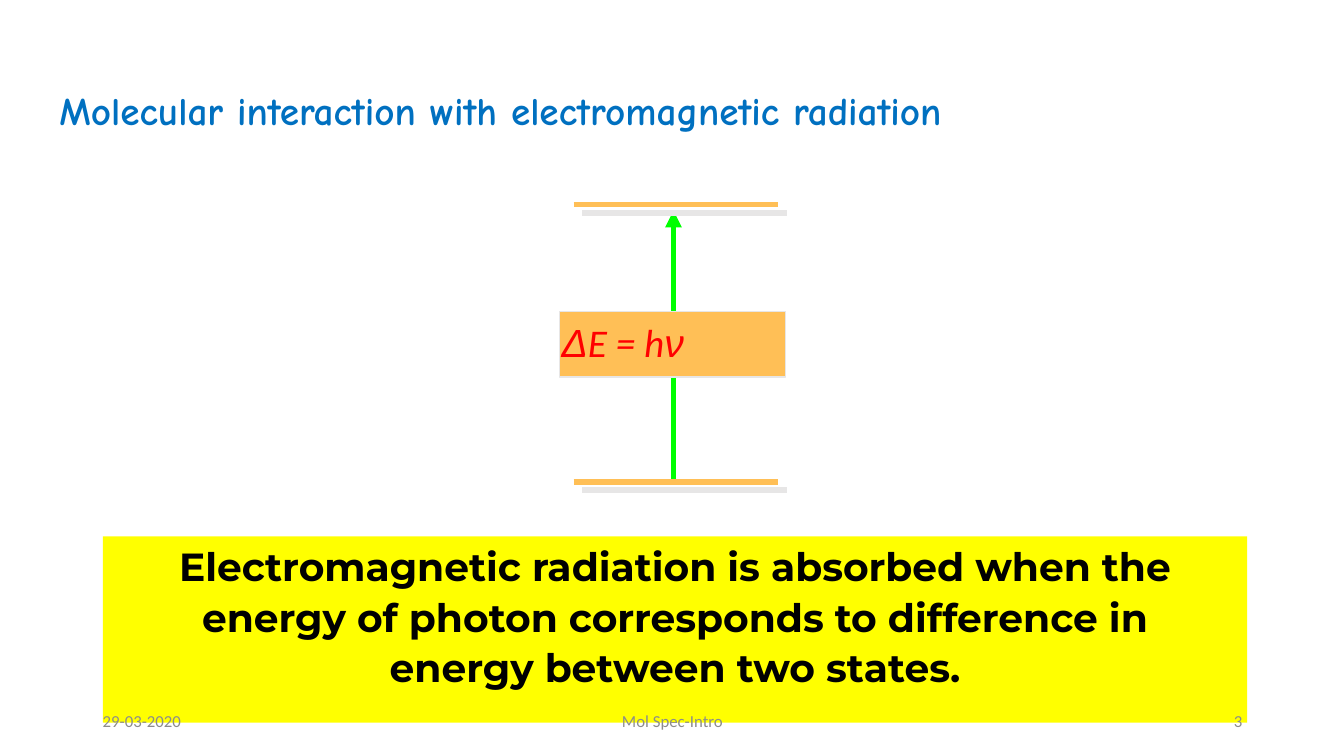
from dataclasses import dataclass

from lxml.etree import SubElement
from pptx import Presentation
from pptx.dml.color import RGBColor
from pptx.enum.shapes import MSO_CONNECTOR, MSO_SHAPE
from pptx.enum.text import MSO_ANCHOR, PP_ALIGN
from pptx.oxml.ns import qn
from pptx.util import Inches, Pt


@dataclass(frozen=True)
class Theme:
    """Colours, fonts and type sizes of the slide."""
    heading: str = "0070C0"
    level: str = "FFBF56"
    shade: str = "E7E6E6"
    photon: str = "00FF00"
    formula: str = "FF0000"
    statement: str = "000000"
    highlight: str = "FFFF00"
    footer: str = "8C8C8C"
    heading_font: str = "Comic Neue"
    statement_font: str = "Montserrat"
    symbol_font: str = "Arial"
    body_font: str = "Calibri"
    large: int = 28
    small: int = 12
    leading: int = 36
    stroke: int = 4


def write(paragraph, text, font, size, color, bold=False, italic=False):
    """Add text to a paragraph, with a line break at each newline."""
    for index, line in enumerate(text.split("\n")):
        if index:
            paragraph.add_line_break()
        run = paragraph.add_run()
        run.text = line
        run.font.name = font
        run.font.size = Pt(size)
        run.font.color.rgb = RGBColor.from_string(color)
        run.font.bold = bold
        run.font.italic = italic


class SlideBuilder:
    """Draws elements on one slide in one style."""

    def __init__(self, slide, theme):
        """Keep the slide and its theme."""
        self.slide = slide
        self.theme = theme

    def line(self, start, end, color, arrow=False, shadow=False):
        """Draw a straight line with an optional arrowhead and shadow."""
        connector = self.slide.shapes.add_connector(
            MSO_CONNECTOR.STRAIGHT, *(Inches(v) for v in (*start, *end)))
        connector.line.color.rgb = RGBColor.from_string(color)
        connector.line.width = Pt(self.theme.stroke)
        properties = connector._element.spPr
        if arrow:
            SubElement(properties.find(qn("a:ln")), qn("a:tailEnd"), type="triangle")
        effects = SubElement(properties, qn("a:effectLst"))
        if shadow:
            outer = SubElement(effects, qn("a:outerShdw"), blurRad="0",
                               dist=str(Pt(8.5)), dir="2700000", algn="ctr", rotWithShape="0")
            SubElement(outer, qn("a:srgbClr"), val=self.theme.shade)

    def panel(self, box, fill, border=None, align=PP_ALIGN.LEFT, spacing=0):
        """Draw a filled rectangle and return its paragraph."""
        panel = self.slide.shapes.add_shape(
            MSO_SHAPE.RECTANGLE, *(Inches(v) for v in box))
        panel.shadow.inherit = False
        panel.fill.solid()
        panel.fill.fore_color.rgb = RGBColor.from_string(fill)
        if border:
            panel.line.color.rgb = RGBColor.from_string(border)
            panel.line.width = Pt(1)
        else:
            panel.line.fill.background()
        frame = panel.text_frame
        frame.word_wrap = True
        frame.vertical_anchor = MSO_ANCHOR.TOP
        frame.margin_left = frame.margin_right = Inches(0.02)
        frame.margin_top = frame.margin_bottom = Inches(0.03)
        paragraph = frame.paragraphs[0]
        paragraph.alignment = align
        paragraph.line_spacing = Pt(self.theme.leading)
        paragraph.space_before = paragraph.space_after = Pt(spacing)
        return paragraph

    def label(self, box, align=PP_ALIGN.LEFT, anchor=MSO_ANCHOR.TOP):
        """Add a text box and return its paragraph."""
        frame = self.slide.shapes.add_textbox(*(Inches(v) for v in box)).text_frame
        frame.word_wrap = True
        frame.vertical_anchor = anchor
        paragraph = frame.paragraphs[0]
        paragraph.alignment = align
        return paragraph


def main():
    """Build and save the slide."""
    theme = Theme()
    deck = Presentation()
    deck.slide_width, deck.slide_height = Inches(13.33), Inches(7.5)
    builder = SlideBuilder(deck.slides.add_slide(deck.slide_layouts[6]), theme)
    ground, excited = 4.78, 2.03

    builder.line((6.68, ground), (6.68, 2.09), theme.photon, arrow=True)

    formula = builder.panel((5.55, 3.09, 2.24, 0.65), theme.level, border=theme.shade)
    for part, font in (("Δ", theme.symbol_font), ("E = h", theme.body_font),
                       ("ν", theme.symbol_font)):
        write(formula, part, font, theme.large, theme.formula, italic=True)

    statement = builder.panel((1.02, 5.32, 11.35, 1.85), theme.highlight,
                              align=PP_ALIGN.CENTER, spacing=10)
    write(statement, "Electromagnetic radiation is absorbed when the\n"
          "energy of photon corresponds to difference in\n"
          "energy between two states.",
          theme.statement_font, theme.large, theme.statement, bold=True)

    for energy in (ground, excited):
        builder.line((5.69, energy), (7.72, energy), theme.level, shadow=True)

    heading = builder.label((0.49, 0.81, 11.17, 0.98))
    write(heading, "Molecular interaction with electromagnetic radiation",
          theme.heading_font, theme.large, theme.heading, bold=True)

    for text, left, width, align in (("29-03-2020", 0.92, 3, PP_ALIGN.LEFT),
                                     ("Mol Spec-Intro", 4.42, 4.5, PP_ALIGN.CENTER),
                                     ("3", 9.42, 3, PP_ALIGN.RIGHT)):
        footer = builder.label((left, 6.95, width, 0.4), align, MSO_ANCHOR.MIDDLE)
        write(footer, text, theme.body_font, theme.small, theme.footer)

    deck.save("out.pptx")


if __name__ == "__main__":
    main()
